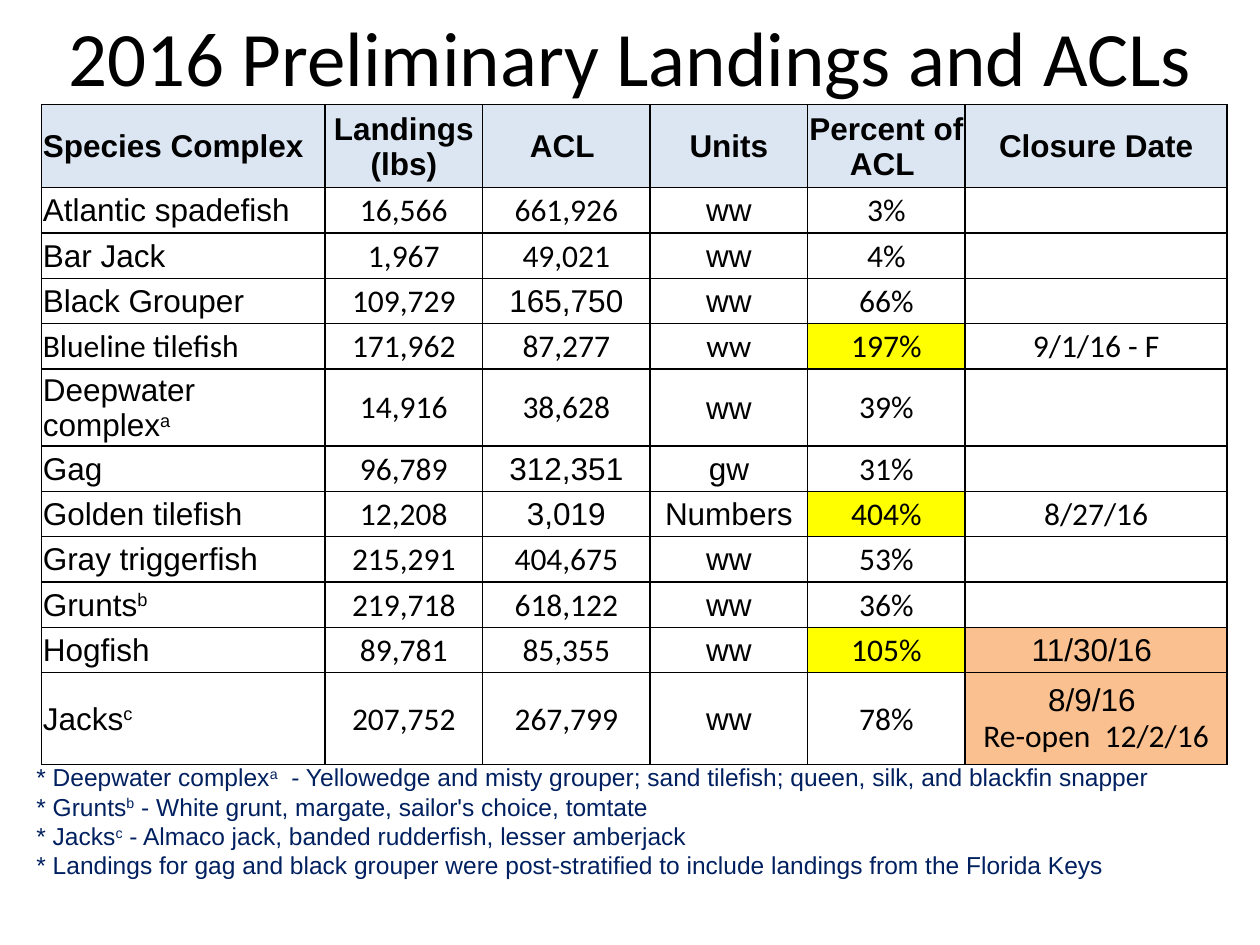
from dataclasses import dataclass
from itertools import cycle

from lxml.etree import SubElement
from pptx import Presentation
from pptx.dml.color import RGBColor
from pptx.enum.text import MSO_ANCHOR, MSO_AUTO_SIZE, PP_ALIGN
from pptx.oxml.ns import qn
from pptx.util import Inches, Pt

BLACK = RGBColor(0x00, 0x00, 0x00)
NAVY = RGBColor(0x00, 0x20, 0x60)
PALE = RGBColor(0xDC, 0xE6, 0xF2)
YELLOW = RGBColor(0xFF, 0xFF, 0x00)
ORANGE = RGBColor(0xFA, 0xC0, 0x90)
ARIAL = "Arial"
CALIBRI = "Calibri"
LEFT = PP_ALIGN.LEFT
CENTER = PP_ALIGN.CENTER

HEADS = ["Species Complex", "Landings (lbs)", "ACL ", "Units",
         "Percent of ACL ", "Closure Date"]
WIDTHS = [2.25, 1.25, 1.33, 1.25, 1.25, 2.08]
HEIGHTS = [0.66] + [0.36] * 10 + [0.73]
NOTES = """* Deepwater complex^a^  - Yellowedge and misty grouper; sand tilefish; queen, silk, and blackfin snapper
* Grunts^b^ - White grunt, margate, sailor's choice, tomtate
* Jacks^c^ - Almaco jack, banded rudderfish, lesser amberjack\v* Landings for gag and black grouper were post-stratified to include landings from the Florida Keys"""


@dataclass
class Stock:
    name: str
    caught: int
    limit: int
    share: int
    unit: str = "ww"
    date: str = ""
    label: str = ARIAL
    quota: str = CALIBRI
    close: tuple = (CALIBRI,)
    tint: RGBColor | None = None


STOCKS = [
    Stock("Atlantic spadefish", 16566, 661926, 3),
    Stock("Bar Jack", 1967, 49021, 4),
    Stock("Black Grouper", 109729, 165750, 66, quota=ARIAL),
    Stock("Blueline tilefish", 171962, 87277, 197, date="9/1/16 - F", label=CALIBRI),
    Stock("Deepwater complex^a", 14916, 38628, 39),
    Stock("Gag", 96789, 312351, 31, unit="gw", quota=ARIAL),
    Stock("Golden tilefish", 12208, 3019, 404, unit="Numbers", date="8/27/16",
          quota=ARIAL),
    Stock("Gray triggerfish", 215291, 404675, 53),
    Stock("Grunts^b", 219718, 618122, 36),
    Stock("Hogfish", 89781, 85355, 105, date="11/30/16\u00a0", close=(ARIAL,),
          tint=ORANGE),
    Stock("Jacks^c", 207752, 267799, 78, date="8/9/16\u00a0\nRe-open  12/2/16",
          close=(ARIAL, CALIBRI), tint=ORANGE),
]


def put(frame, text: str, *, size: float, fonts: tuple = (ARIAL,),
        color: RGBColor = BLACK, bold: bool = False, align=LEFT) -> None:
    for row, (line, face) in enumerate(zip(text.split("\n"), cycle(fonts))):
        para = frame.add_paragraph() if row else frame.paragraphs[0]
        para.alignment = align
        for spot, part in enumerate(line.split("^")):
            for turn, piece in enumerate(part.split("\v")):
                if turn:
                    para.add_line_break()
                if not piece:
                    continue
                run = para.add_run()
                run.text = piece
                run.font.size = Pt(size)
                run.font.name = face
                run.font.bold = bold
                run.font.color.rgb = color
                if spot % 2:
                    run.font._element.set("baseline", "30000")


def edge(cell) -> None:
    props = cell._tc.get_or_add_tcPr()
    for side in ("lnL", "lnR", "lnT", "lnB"):
        line = SubElement(props, qn(f"a:{side}"), w=str(Pt(1)))
        fill = SubElement(line, qn("a:solidFill"))
        SubElement(fill, qn("a:srgbClr"), val=str(BLACK))


def fill_cell(cell, text: str, *, fonts: tuple = (ARIAL,), bold: bool = False,
              align=CENTER, tint: RGBColor | None = None) -> None:
    cell.margin_left = cell.margin_right = cell.margin_top = Inches(0.01)
    cell.margin_bottom = 0
    cell.vertical_anchor = MSO_ANCHOR.MIDDLE
    edge(cell)
    if tint is None:
        cell.fill.background()
    else:
        cell.fill.solid()
        cell.fill.fore_color.rgb = tint
    put(cell.text_frame, text, size=18, fonts=fonts, bold=bold, align=align)


def fill_row(table, row: int, stock: Stock) -> None:
    units = stock.label
    over = YELLOW if stock.share > 100 else None
    fields = [
        (stock.name, (stock.label,), None),
        (f"{stock.caught:,}", (CALIBRI,), None),
        (f"{stock.limit:,}", (stock.quota,), None),
        (stock.unit, (units,), None),
        (f"{stock.share}%", (CALIBRI,), over),
        (stock.date, stock.close, stock.tint),
    ]
    for col, (text, fonts, tint) in enumerate(fields):
        fill_cell(table.cell(row, col), text, fonts=fonts, tint=tint,
                  align=CENTER if col else LEFT)


def add_table(slide) -> None:
    table = slide.shapes.add_table(
        len(HEIGHTS), len(WIDTHS), Inches(0.33), Inches(0.83),
        Inches(sum(WIDTHS)), Inches(sum(HEIGHTS))).table
    table.first_row = table.horz_banding = False
    for col, width in zip(table.columns, WIDTHS):
        col.width = Inches(width)
    for row, height in zip(table.rows, HEIGHTS):
        row.height = Inches(height)
    for col, head in enumerate(HEADS):
        fill_cell(table.cell(0, col), head, bold=True, tint=PALE,
                  align=CENTER if col else LEFT)
    for row, stock in enumerate(STOCKS, 1):
        fill_row(table, row, stock)


def add_box(slide, left: float, top: float, width: float, height: float):
    frame = slide.shapes.add_textbox(
        Inches(left), Inches(top), Inches(width), Inches(height)).text_frame
    frame.word_wrap = True
    return frame


def main() -> None:
    deck = Presentation()
    deck.slide_width = Inches(10)
    deck.slide_height = Inches(7.5)
    slide = deck.slides.add_slide(deck.slide_layouts[6])

    title = add_box(slide, 0.17, 0.03, 9.67, 0.83)
    title.vertical_anchor = MSO_ANCHOR.MIDDLE
    put(title, "2016 Preliminary Landings and ACLs", size=44, fonts=(CALIBRI,),
        align=CENTER)

    add_table(slide)

    notes = add_box(slide, 0.19, 6, 9.38, 1.04)
    notes.auto_size = MSO_AUTO_SIZE.SHAPE_TO_FIT_TEXT
    put(notes, NOTES, size=14, color=NAVY)

    deck.save("out.pptx")


if __name__ == "__main__":
    main()
